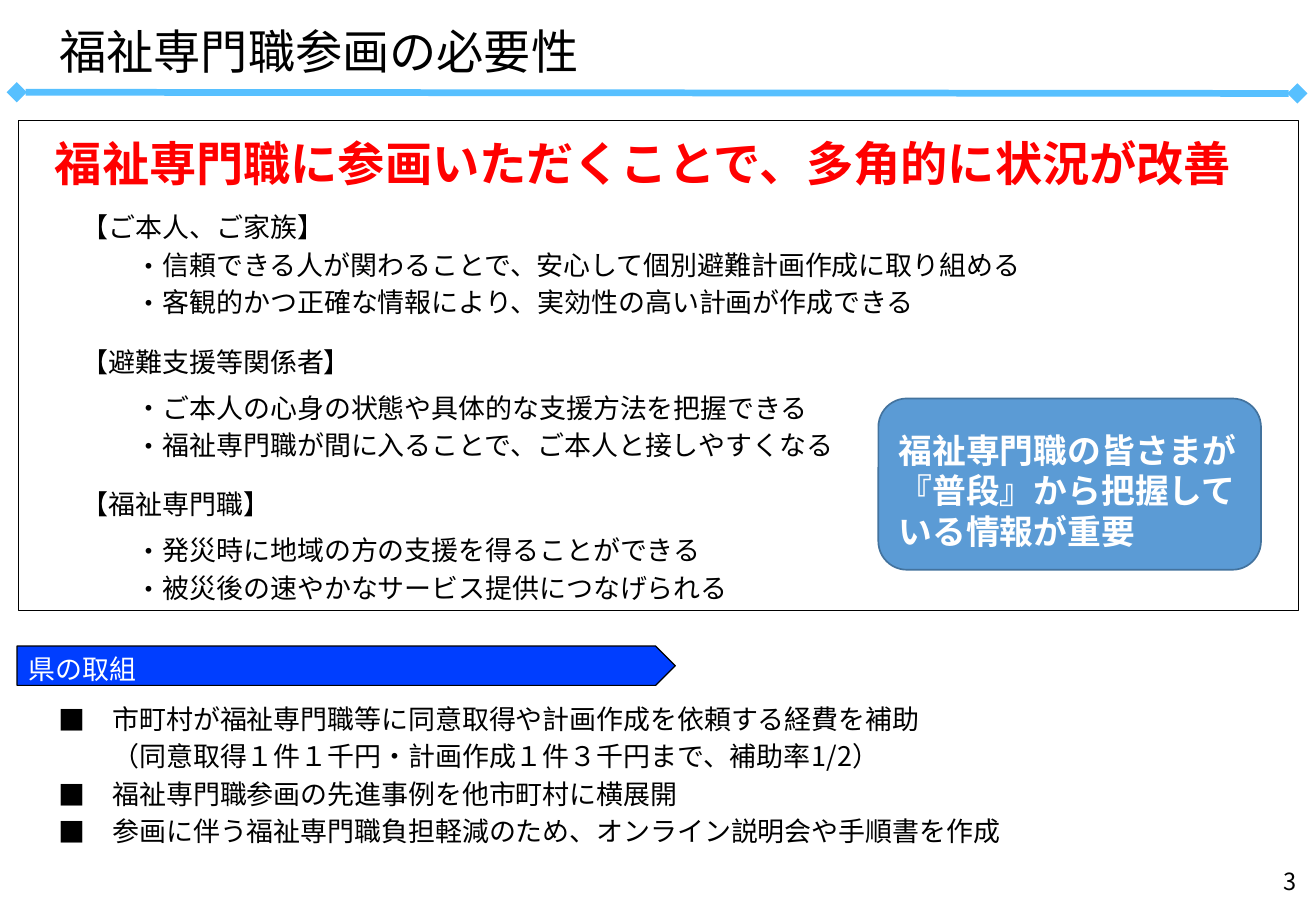
from lxml import etree
from pptx import Presentation
from pptx.dml.color import RGBColor
from pptx.enum.shapes import MSO_CONNECTOR, MSO_SHAPE
from pptx.enum.text import MSO_ANCHOR, MSO_AUTO_SIZE, PP_ALIGN
from pptx.oxml.ns import qn
from pptx.util import Pt

TOP, MIDDLE = MSO_ANCHOR.TOP, MSO_ANCHOR.MIDDLE
LEFT, RIGHT = PP_ALIGN.LEFT, PP_ALIGN.RIGHT
NO_FIT = MSO_AUTO_SIZE.NONE
STRAIGHT = MSO_CONNECTOR.STRAIGHT
RECT, ROUND = MSO_SHAPE.RECTANGLE, MSO_SHAPE.ROUNDED_RECTANGLE
ARROW = MSO_SHAPE.PENTAGON

FONT = "Noto Sans CJK JP"
BLACK = RGBColor(0, 0, 0)
WHITE = RGBColor(0xFF, 0xFF, 0xFF)
RED = RGBColor(0xFF, 0, 0)
SKY = RGBColor(0x57, 0xC0, 0xFF)
BLUE = RGBColor(0, 0x3E, 0xFF)
STEEL = RGBColor(0x5B, 0x9B, 0xD5)
NAVY = RGBColor(0x43, 0x73, 0x9E)

GROUPS = [
    ("【ご本人、ご家族】", 3, 3, [
        "信頼できる人が関わることで、安心して個別避難計画作成に取り組める",
        "客観的かつ正確な情報により、実効性の高い計画が作成できる"]),
    ("【避難支援等関係者】", 16, 8, [
        "ご本人の心身の状態や具体的な支援方法を把握できる",
        "福祉専門職が間に入ることで、ご本人と接しやすくなる"]),
    ("【福祉専門職】", 16, 8, [
        "発災時に地域の方の支援を得ることができる",
        "被災後の速やかなサービス提供につなげられる"]),
]
EFFORTS = [
    ("市町村が福祉専門職等に同意取得や計画作成を依頼する経費を補助", "■"),
    ("（同意取得１件１千円・計画作成１件３千円まで、補助率1/2）", None),
    ("福祉専門職参画の先進事例を他市町村に横展開", "■"),
    ("参画に伴う福祉専門職負担軽減のため、オンライン説明会や手順書を作成", "■"),
]


def place(shape, left, top, width, height):
    shape.left, shape.top = Pt(left), Pt(top)
    shape.width, shape.height = Pt(width), Pt(height)


def set_frame(shape, anchor, left=7.2, top=3.6, right=7.2, bottom=3.6):
    """Set anchor and insets, and return the text frame."""
    frame = shape.text_frame
    frame.word_wrap = True
    frame.auto_size = NO_FIT
    frame.vertical_anchor = anchor
    frame.margin_left, frame.margin_top = Pt(left), Pt(top)
    frame.margin_right, frame.margin_bottom = Pt(right), Pt(bottom)
    return frame


def add_para(frame, text, size=16, color=BLACK, bold=False, align=LEFT,
             before=0, after=0, indent=0, hang=0, bullet=None):
    """Fill the empty first paragraph, or append one; line pitch is 1.2 em."""
    para = frame.paragraphs[0]
    if para.text:
        para = frame.add_paragraph()
    para.text = text
    para.alignment = align
    para.line_spacing = Pt(size * 1.2)
    para.space_before, para.space_after = Pt(before), Pt(after)
    font = para.font
    font.size, font.bold, font.name = Pt(size), bold, FONT
    font.color.rgb = color

    props = para._p.get_or_add_pPr()
    props.set("marL", str(Pt(indent)))
    props.set("indent", str(Pt(-hang)))
    base = props.find(qn("a:defRPr"))
    etree.SubElement(base, qn("a:ea"), typeface=FONT)
    if bullet:
        marks = [("a:buFont", {"typeface": FONT}), ("a:buChar", {"char": bullet})]
    else:
        marks = [("a:buNone", {})]
    for tag, attrs in marks:
        base.addprevious(etree.Element(qn(tag), attrs))


def add_box(slide, kind, box, fill, line, weight):
    shape = slide.shapes.add_shape(kind, *map(Pt, box))
    shape.shadow.inherit = False
    if fill is None:
        shape.fill.background()
    else:
        shape.fill.solid()
        shape.fill.fore_color.rgb = fill
    shape.line.color.rgb = line
    shape.line.width = Pt(weight)
    return shape


def add_rule(slide):
    """Draw the line with diamond ends below the title."""
    rule = slide.shapes.add_connector(STRAIGHT, Pt(10), Pt(54.7), Pt(769), Pt(55.4))
    rule.line.color.rgb = SKY
    rule.line.width = Pt(4)
    props = rule._element.spPr
    line = props.find(qn("a:ln"))
    for end in ("a:headEnd", "a:tailEnd"):
        etree.SubElement(line, qn(end), type="diamond")
    etree.SubElement(props, qn("a:effectLst"))


def add_panel(slide):
    panel = add_box(slide, RECT, (10.8, 71.3, 758.9, 290.9), None, BLACK, 0.5)
    frame = set_frame(panel, TOP, 5.76, 8.2, 5.76, 0)
    add_para(frame, "福祉専門職に参画いただくことで、多角的に状況が改善",
             28, RED, True, after=9, indent=16)
    for head, gap, lead, points in GROUPS:
        add_para(frame, head, before=gap, indent=32)
        for index, point in enumerate(points):
            add_para(frame, point, before=3 if index else lead,
                     indent=80, hang=16, bullet="・")


def add_efforts(slide, body):
    label = add_box(slide, ARROW, (10.1, 383, 390.2, 23.3), BLUE, BLACK, 0.75)
    frame = set_frame(label, MIDDLE, top=3.6, bottom=0)
    add_para(frame, "県の取組", color=WHITE)

    place(body, 18.7, 413.5, 694.8, 100)
    frame = set_frame(body, TOP, 0, 2.9, 0, 2.9)
    for index, (text, mark) in enumerate(EFFORTS):
        add_para(frame, text, before=3 if index else 0, indent=48,
                 hang=32 if mark else 0, bullet=mark)


def add_note(slide):
    note = add_box(slide, ROUND, (520.6, 236.2, 226.8, 101.5), STEEL, NAVY, 1)
    frame = set_frame(note, MIDDLE, top=11, right=5)
    add_para(frame, "福祉専門職の皆さまが『普段』から把握している情報が重要",
             20, WHITE, True)


def add_number(slide):
    number = slide.shapes.add_textbox(Pt(612), Pt(507.6), Pt(163.4), Pt(28.8))
    add_para(set_frame(number, MIDDLE), "3", 14, align=RIGHT)


def main():
    deck = Presentation()
    deck.slide_width, deck.slide_height = Pt(780), Pt(540)
    slide = deck.slides.add_slide(deck.slide_layouts[1])
    title, body = slide.placeholders
    place(title, 0, 6, 780, 48)
    add_para(set_frame(title, MIDDLE, left=35.2), "福祉専門職参画の必要性", 28)
    add_rule(slide)
    add_panel(slide)
    add_efforts(slide, body)
    add_note(slide)
    add_number(slide)
    deck.save("out.pptx")


if __name__ == "__main__":
    main()
